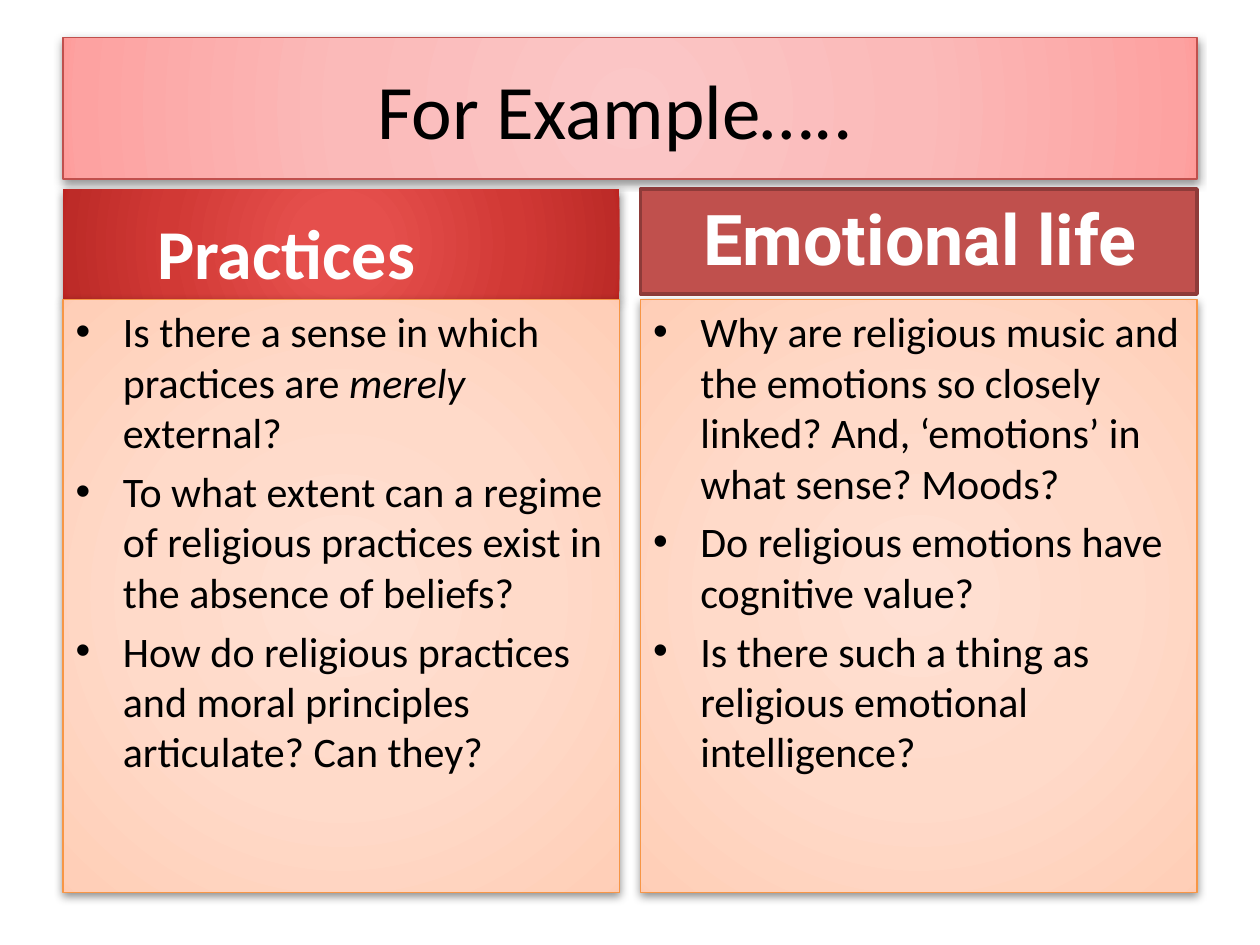
from dataclasses import dataclass

from lxml import etree
from pptx import Presentation
from pptx.dml.color import RGBColor
from pptx.enum import text
from pptx.oxml import ns
from pptx.util import Pt


@dataclass(frozen=True)
class Theme:
    font: str = "Calibri"
    accent_font: str = "Roboto"
    title_size: int = 44
    heading_size: int = 40
    body_size: int = 24
    dark: str = "000000"
    light: str = "FFFFFF"
    red: str = "C0504D"
    deep_red: str = "8E3B39"
    orange: str = "F79646"
    pink_glow: tuple = ((0, "FBC7C7"), (50, "FBBAB9"), (97, "FDA2A1"), (100, "FF9A98"))
    red_glow: tuple = ((0, "E6504C"), (15, "E54F4C"), (62, "D13935"),
                       (97, "BD2B28"), (100, "BD221E"))
    peach_glow: tuple = ((0, "FFE0D3"), (50, "FFDAC9"), (97, "FFCFB8"), (100, "FFCBB3"))


THEME = Theme()
LEFT, WIDTH, GAP = 36, 648, 12
COLUMN = (WIDTH - GAP) / 2
RIGHT = LEFT + COLUMN + GAP
HEAD_TOP, BODY_TOP, BODY_HEIGHT = 108, 171.25, 338.75

PRACTICES = [
    [("Is there a sense in which practices are ", False), ("merely ", True),
     ("external?", False)],
    [("To what extent can a regime of religious practices exist in the absence of beliefs?",
      False)],
    [("How do religious practices and moral principles articulate? Can they?", False)],
]
EMOTIONS = [
    [("Why are religious music and the emotions so closely linked? "
      "And, ‘emotions’ in what sense? Moods?", False)],
    [("Do religious emotions have cognitive value?", False)],
    [("Is there such a thing as religious emotional intelligence?", False)],
]


def place(sp, left, top, width, height):
    sp.left, sp.top, sp.width, sp.height = Pt(left), Pt(top), Pt(width), Pt(height)


def add_node(parent, tag, **attrs):
    return etree.SubElement(parent, ns.qn(tag), {k: str(v) for k, v in attrs.items()})


def add_color(parent, color):
    return add_node(parent, "a:srgbClr", val=color)


def radial_fill(sp, stops):
    sp.fill.gradient()
    grad = sp._element.spPr.find(ns.qn("a:gradFill"))
    for child in list(grad):
        grad.remove(child)
    gs_list = add_node(grad, "a:gsLst")
    for pos, color in stops:
        add_color(add_node(gs_list, "a:gs", pos=pos * 1000), color)
    circle = add_node(grad, "a:path", path="circle")
    add_node(circle, "a:fillToRect", l=50000, t=50000, r=50000, b=50000)


def outline(sp, color, width):
    sp.line.color.rgb = RGBColor.from_string(color)
    sp.line.width = Pt(width)


def drop_shadow(sp):
    sp.shadow.inherit = False
    effects = sp._element.spPr.find(ns.qn("a:effectLst"))
    shadow = add_node(effects, "a:outerShdw", blurRad=Pt(5), dist=Pt(2),
                      dir=90 * 60000, rotWithShape=0)
    add_node(add_color(shadow, THEME.dark), "a:alpha", val=43000)


def add_run(p, words, size, color, font=THEME.font, bold=False, italic=False):
    r = p.add_run()
    r.text = words
    r.font.name, r.font.size = font, Pt(size)
    r.font.bold, r.font.italic = bold, italic
    r.font.color.rgb = RGBColor.from_string(color)


def set_frame(sp, anchor, left=7.2, right=7.2, bottom=3.6):
    tf = sp.text_frame
    tf.word_wrap = True
    tf.auto_size = text.MSO_AUTO_SIZE.NONE
    tf.vertical_anchor = anchor
    tf.margin_left, tf.margin_right, tf.margin_bottom = Pt(left), Pt(right), Pt(bottom)
    return tf


def fill_title(sp, words):
    place(sp, LEFT, 21.6, WIDTH, 80.64)
    radial_fill(sp, THEME.pink_glow)
    outline(sp, THEME.red, 0.75)
    drop_shadow(sp)
    p = set_frame(sp, text.MSO_ANCHOR.MIDDLE, right=24).paragraphs[0]
    p.alignment = text.PP_ALIGN.CENTER
    add_run(p, words, THEME.title_size, THEME.dark)


def fill_heading(sp, words, left, height, font, indent, bottom):
    place(sp, left, HEAD_TOP, COLUMN, height)
    tf = set_frame(sp, text.MSO_ANCHOR.BOTTOM, left=indent, bottom=bottom)
    add_run(tf.paragraphs[0], words, THEME.heading_size, THEME.light, font, bold=True)


def fill_list(sp, items, left):
    place(sp, left, BODY_TOP, COLUMN, BODY_HEIGHT)
    radial_fill(sp, THEME.peach_glow)
    outline(sp, THEME.orange, 0.75)
    drop_shadow(sp)
    tf = set_frame(sp, text.MSO_ANCHOR.TOP)
    for i, item in enumerate(items):
        p = tf.add_paragraph() if i else tf.paragraphs[0]
        for words, italic in item:
            add_run(p, words, THEME.body_size, THEME.dark, italic=italic)


def main():
    prs = Presentation()
    prs.slide_width, prs.slide_height = Pt(720), Pt(540)
    s = prs.slides.add_slide(prs.slide_layouts.get_by_name("Comparison"))
    title, left_head, left_list, right_head, right_list = s.placeholders

    fill_title(title, "For Example…..")

    fill_heading(left_head, "Practices", LEFT, 63.25, THEME.font, 54, 3.6)
    radial_fill(left_head, THEME.red_glow)
    left_head.line.fill.background()
    drop_shadow(left_head)
    fill_list(left_list, PRACTICES, LEFT)

    fill_heading(right_head, "Emotional life", RIGHT, 60, THEME.accent_font, 36, 8)
    right_head.fill.solid()
    right_head.fill.fore_color.rgb = RGBColor.from_string(THEME.red)
    outline(right_head, THEME.deep_red, 2)
    right_head.shadow.inherit = False
    fill_list(right_list, EMOTIONS, RIGHT)

    prs.save("out.pptx")


if __name__ == "__main__":
    main()
